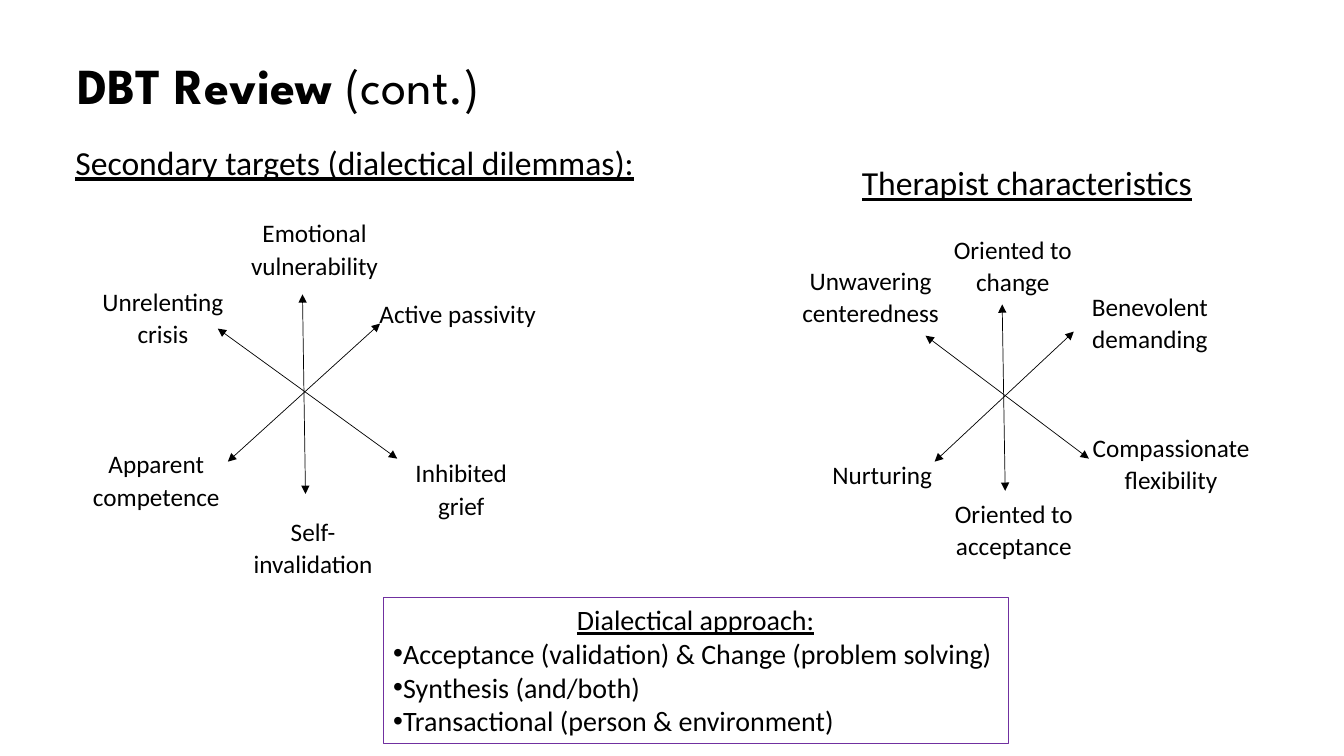
from pptx import Presentation
from pptx.dml.color import RGBColor
from pptx.enum.shapes import MSO_CONNECTOR as Link
from pptx.enum.text import MSO_ANCHOR as Anchor, MSO_AUTO_SIZE as Fit, PP_ALIGN as Align
from pptx.oxml.ns import qn
from pptx.util import Inches, Pt
from lxml.etree import SubElement

BODY = "Calibri"
HEAD = "League Spartan"
BLACK, WHITE, PURPLE = "000000", "FFFFFF", "7030A0"


def color(code):
    return RGBColor.from_string(code)


def apply(item, values):
    """Set each attribute of item named in values."""
    for name, value in values.items():
        setattr(item, name, value)


class Board:
    label = {"alignment": Align.CENTER, "line_spacing": 1.07, "space_after": Pt(8)}

    def __init__(self, deck):
        self.slide = deck.slides.add_slide(deck.slide_layouts[1])

    def place(self, shape, box):
        names = ("left", "top", "width", "height")
        apply(shape, dict(zip(names, map(Inches, box))))

    def run(self, para, text, size, face=BODY, **font):
        run = para.add_run()
        run.text = text
        apply(run.font, {"name": face, "size": Pt(size), **font})
        run.font.color.rgb = color(BLACK)

    def paint(self, shape):
        shape.fill.solid()
        shape.fill.fore_color.rgb = color(WHITE)

    def title(self, box, parts):
        shape = self.slide.shapes.title
        self.place(shape, box)
        apply(shape.text_frame, {"vertical_anchor": Anchor.MIDDLE, "auto_size": Fit.NONE})
        para = shape.text_frame.paragraphs[0]
        apply(para, {"alignment": Align.LEFT, "line_spacing": 0.9})
        for text, bold in parts:
            self.run(para, text, 36, HEAD, bold=bold)

    def bullets(self, box, head, items):
        shape = self.slide.placeholders[1]
        self.place(shape, box)
        self.paint(shape)
        shape.line.color.rgb = color(PURPLE)
        shape.line.width = Pt(0.75)
        frame = shape.text_frame
        frame.auto_size = Fit.NONE
        for i, text in enumerate([head, *items]):
            para = frame.add_paragraph() if i else frame.paragraphs[0]
            apply(para, {"alignment": Align.LEFT if i else Align.CENTER,
                         "space_before": Pt(0)})
            props = para._p.get_or_add_pPr()
            props.set("marL", "0")
            props.set("indent", "0")
            if i:
                SubElement(props, qn("a:buChar")).set("char", "•")
            else:
                SubElement(props, qn("a:buNone"))
            self.run(para, text, 20, underline=not i)

    def text(self, home, box, text, size, layout, **font):
        shape = home.add_textbox(*map(Inches, box))
        self.paint(shape)
        shape.text_frame.word_wrap = True
        para = shape.text_frame.paragraphs[0]
        apply(para, layout)
        self.run(para, text, size, **font)

    def heading(self, box, text):
        self.text(self.slide.shapes, box, text, 24, {"alignment": Align.LEFT}, underline=True)

    def arrow(self, home, ends):
        line = home.add_connector(Link.STRAIGHT, *map(Inches, ends))
        line.line.color.rgb = color(BLACK)
        line.line.width = Pt(0.5)
        for end in ("a:headEnd", "a:tailEnd"):
            SubElement(line.line._get_or_add_ln(), qn(end)).set("type", "triangle")
        SubElement(line._element.spPr, qn("a:effectLst"))

    def wheel(self, labels, arrows):
        """Group the labels with the double arrows that link opposites."""
        home = self.slide.shapes.add_group_shape().shapes
        for text, box in labels.items():
            self.text(home, box, text, 18, self.label)
        for ends in arrows:
            self.arrow(home, ends)


def main():
    deck = Presentation()
    apply(deck, {"slide_width": Inches(13.33), "slide_height": Inches(7.5)})
    board = Board(deck)
    board.title((0.67, 0.25, 12, 1.25), [("DBT Review ", True), ("(cont.)", False)])
    board.bullets((3.8, 5.93, 6.2, 1.45), "Dialectical approach:", [
        "Acceptance (validation) & Change (problem solving)",
        "Synthesis (and/both)",
        "Transactional (person & environment)",
    ])
    board.heading((0.65, 1.36, 6.24, 0.43), "Secondary targets (dialectical dilemmas):")
    board.wheel({
        "Unrelenting crisis": (0.84, 2.77, 1.55, 0.75),
        "Emotional vulnerability": (2.22, 2.09, 1.8, 0.75),
        "Apparent competence": (0.65, 4.38, 1.8, 0.9),
        "Inhibited grief": (3.89, 4.47, 1.37, 0.75),
        "Self-invalidation": (2.32, 5.05, 1.57, 0.75),
        "Active passivity": (3.64, 2.89, 1.8, 0.43),
    }, [(3, 2.92, 3.03, 4.9), (2.16, 3.26, 3.94, 4.55), (3.77, 3.21, 2.26, 4.58)])
    board.heading((8.45, 1.56, 3.5, 0.4), "Therapist characteristics")
    board.wheel({
        "Nurturing": (8.11, 4.49, 1.28, 0.45),
        "Oriented to change": (9.36, 2.25, 1.37, 0.73),
        "Benevolent demanding": (10.72, 2.82, 1.37, 0.73),
        "Compassionate flexibility": (10.65, 4.22, 1.93, 0.75),
        "Unwavering centeredness": (7.82, 2.56, 1.63, 0.75),
        "Oriented to acceptance": (9.24, 4.87, 1.63, 0.75),
    }, [(9.94, 3.02, 9.97, 4.87), (9.18, 3.33, 10.8, 4.55), (10.65, 3.29, 9.27, 4.58)])
    deck.save("out.pptx")


if __name__ == "__main__":
    main()
